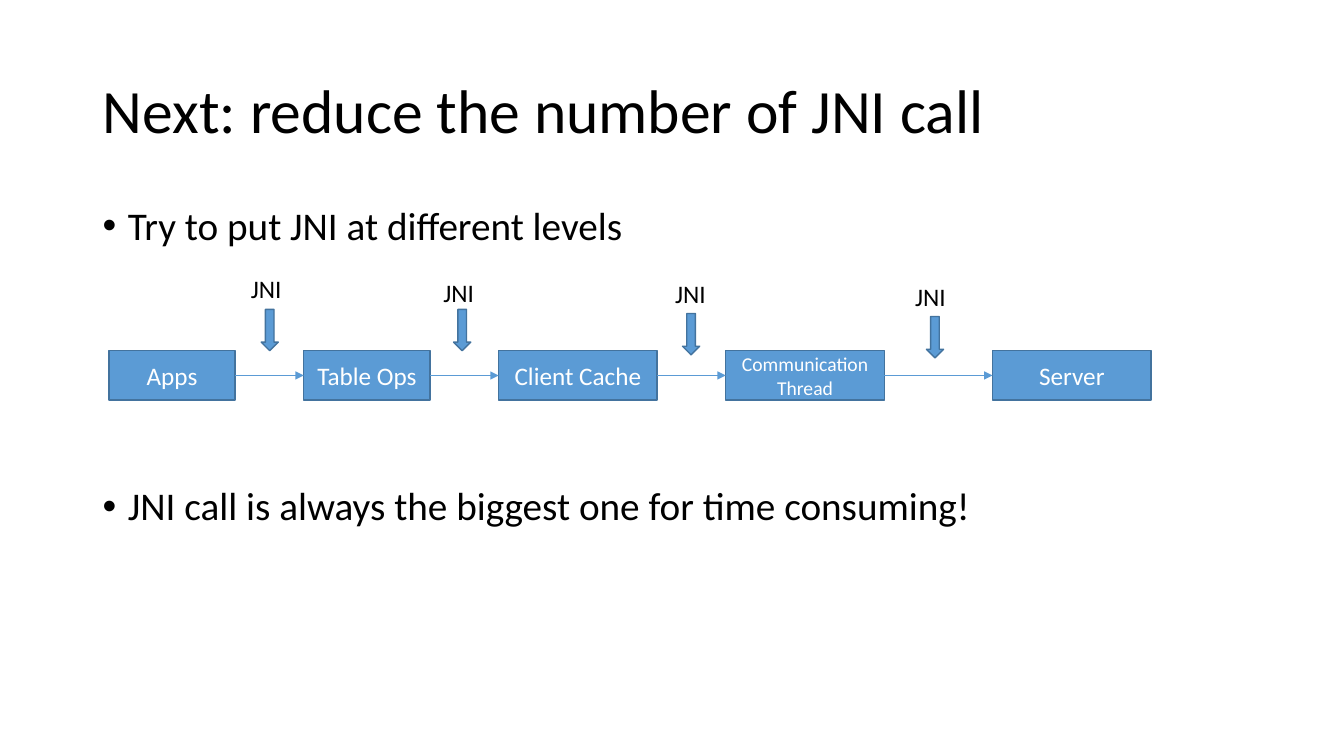
from collections import namedtuple

from lxml.etree import SubElement
from pptx import Presentation
from pptx.dml.color import RGBColor
from pptx.enum.shapes import MSO_CONNECTOR, MSO_SHAPE
from pptx.enum.text import MSO_ANCHOR, PP_ALIGN
from pptx.oxml.ns import qn
from pptx.util import Inches, Pt

BLACK = RGBColor(0x00, 0x00, 0x00)
WHITE = RGBColor(0xFF, 0xFF, 0xFF)
BLUE = RGBColor(0x5B, 0x9B, 0xD5)
DARK_BLUE = RGBColor(0x43, 0x73, 0x9E)
FONT = "Calibri"

# The slide is a grid of 100 columns by 100 rows
WIDTH, HEIGHT = Inches(13.33), Inches(7.5)
Box = namedtuple("Box", "left top width height")

TITLE_BOX = Box(6.9, 5.33, 86.25, 19.33)
BODY_BOX = Box(6.9, 26.67, 86.25, 63.47)
CHAIN_BOX = Box(8.1, 35.47, 77.5, 17.46)

# Bullet text and the space before it in points
BULLETS = [
    ("Try to put JNI at different levels", 10),
    ("JNI call is always the biggest one for time consuming!", 170),
]

# Stage name, text size, width and the gap after it in columns
STAGES = [
    ("Apps", 18, 9.4, 5.1),
    ("Table Ops", 18, 9.4, 5.1),
    ("Client Cache", 18, 11.8, 5.1),
    ("Communication Thread", 14, 11.8, 8.05),
    ("Server", 18, 11.8, 0),
]
STAGE_ROW, STAGE_HEIGHT = 10.93, 6.53

# Per gap: label column and row, arrow column and row (columns from gap start)
CALLS = [
    (0.43, 0, 1.93, 5.46),
    (0.25, 0.53, 1.75, 5.46),
    (0.6, 0.66, 1.88, 6),
    (1.55, 1.06, 3.13, 6.4),
]


def place(box):
    """Turn a grid box into slide lengths."""
    return (int(WIDTH * box.left / 100), int(HEIGHT * box.top / 100),
            int(WIDTH * box.width / 100), int(HEIGHT * box.height / 100))


def write(para, text, size, color):
    span = para.add_run()
    span.text = text
    span.font.name = FONT
    span.font.size = Pt(size)
    span.font.color.rgb = color


def add_block(page, kind, box):
    block = page.shapes.add_shape(kind, *place(box))
    block.shadow.inherit = False
    block.fill.solid()
    block.fill.fore_color.rgb = BLUE
    block.line.color.rgb = DARK_BLUE
    block.line.width = Pt(1)
    return block


def add_text_frame(page, box):
    frame = page.shapes.add_textbox(*place(box)).text_frame
    frame.word_wrap = True
    return frame


def add_title(page, box, text):
    title = page.shapes.title
    title.left, title.top, title.width, title.height = place(box)
    frame = title.text_frame
    frame.vertical_anchor = MSO_ANCHOR.MIDDLE
    para = frame.paragraphs[0]
    para.alignment = PP_ALIGN.LEFT
    para.line_spacing = 0.9
    write(para, text, 44, BLACK)


def add_bullets(page, box):
    frame = add_text_frame(page, box)
    for index, (text, gap) in enumerate(BULLETS):
        para = frame.add_paragraph() if index else frame.paragraphs[0]
        para.line_spacing = 0.9
        para.space_before = Pt(gap)
        props = para._p.get_or_add_pPr()
        props.set("marL", str(Inches(0.25)))
        props.set("indent", str(Inches(-0.25)))
        SubElement(props, qn("a:buFont"), typeface="Arial")
        SubElement(props, qn("a:buChar"), char="•")
        write(para, text, 28, BLACK)


def link(page, source, target):
    """Join two stages with a thin arrow."""
    line = page.shapes.add_connector(MSO_CONNECTOR.STRAIGHT, 0, 0, 0, 0)
    line.begin_connect(source, 3)
    line.end_connect(target, 1)
    line.line.color.rgb = BLUE
    line.line.width = Pt(0.5)
    SubElement(line.line._get_or_add_ln(), qn("a:tailEnd"), type="triangle")
    SubElement(line._element.spPr, qn("a:effectLst"))


def add_chain(page, box):
    # Stages, left to right
    stages, gap_starts = [], []
    left = box.left
    for name, size, width, gap in STAGES:
        stage = add_block(page, MSO_SHAPE.RECTANGLE,
                          Box(left, box.top + STAGE_ROW, width, STAGE_HEIGHT))
        frame = stage.text_frame
        frame.word_wrap = True
        frame.vertical_anchor = MSO_ANCHOR.MIDDLE
        frame.paragraphs[0].alignment = PP_ALIGN.CENTER
        write(frame.paragraphs[0], name, size, WHITE)
        stages.append(stage)
        gap_starts.append(left + width)
        left += width + gap

    for source, target in zip(stages, stages[1:]):
        link(page, source, target)

    # JNI label and down arrow above each gap
    for start, call in zip(gap_starts, CALLS):
        label_column, label_row, arrow_column, arrow_row = call
        add_block(page, MSO_SHAPE.DOWN_ARROW,
                  Box(start + arrow_column, box.top + arrow_row, 1.28, 5.47))
        frame = add_text_frame(
            page, Box(start + label_column, box.top + label_row, 4.2, 5.33))
        write(frame.paragraphs[0], "JNI", 18, BLACK)


def main():
    deck = Presentation()
    deck.slide_width, deck.slide_height = WIDTH, HEIGHT
    page = deck.slides.add_slide(deck.slide_layouts.get_by_name("Title Only"))
    add_title(page, TITLE_BOX, "Next: reduce the number of JNI call")
    add_bullets(page, BODY_BOX)
    add_chain(page, CHAIN_BOX)
    deck.save("out.pptx")


if __name__ == "__main__":
    main()
